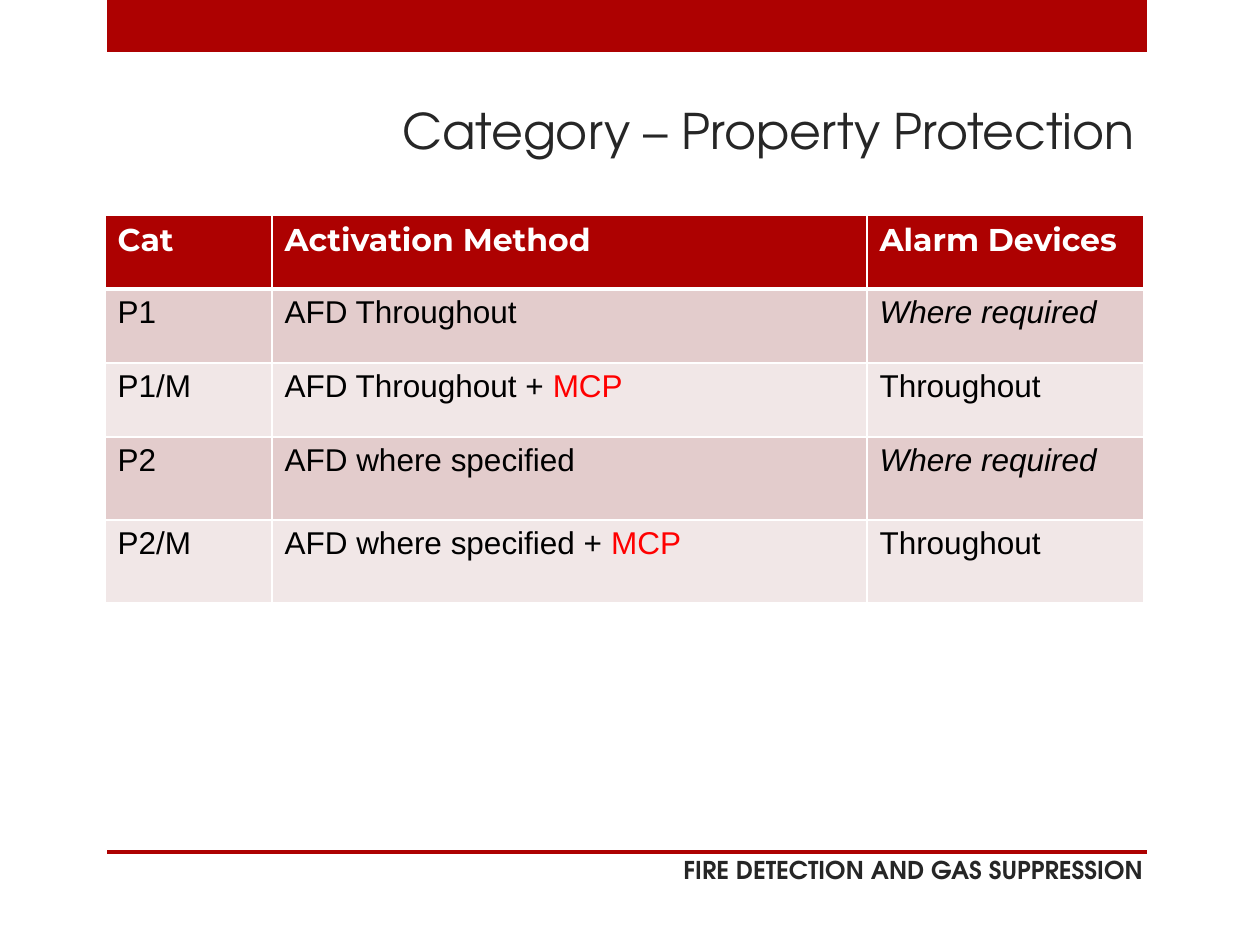
from lxml import etree
from pptx import Presentation
from pptx import util as u
from pptx.dml.color import RGBColor
from pptx.enum import shapes, text
from pptx.oxml.ns import qn

RED = RGBColor(0xAD, 0x01, 0x01)
BRIGHT = RGBColor(0xFF, 0x00, 0x00)
DARK = RGBColor(0x26, 0x26, 0x26)
BLACK = RGBColor(0x00, 0x00, 0x00)
WHITE = RGBColor(0xFF, 0xFF, 0xFF)
BANDS = [RGBColor(0xE3, 0xCC, 0xCC), RGBColor(0xF1, 0xE7, 0xE7)]

HEAD = "TeX Gyre Adventor"
COLS = [167, 595, 277]
ROWS = [74, 74, 74, 83, 83]
MARK = "MCP"
ITALIC = "Where required"
DATA = [
    ["Cat", "Activation Method", "Alarm Devices"],
    ["P1", "AFD Throughout", ITALIC],
    ["P1/M", "AFD Throughout + MCP", "Throughout"],
    ["P2", "AFD where specified", ITALIC],
    ["P2/M", "AFD where specified + MCP", "Throughout"],
]


def px(n):
    return u.Emu(round(n * 914400 / 126))


def style(font, name, size, color, bold=False):
    font.name, font.size, font.bold = name, u.Pt(size), bold
    font.color.rgb = color


def bar(slide, x, y, w, h):
    rect = slide.shapes.add_shape(
        shapes.MSO_SHAPE.RECTANGLE, px(x), px(y), px(w), px(h))
    rect.shadow.inherit = False
    rect.fill.solid()
    rect.fill.fore_color.rgb = RED
    rect.line.fill.background()


def label(shape, words, size, bold=False):
    """Fill a shape with one right-aligned line of heading text."""
    frame = shape.text_frame
    frame.text = words
    frame.word_wrap = True
    frame.auto_size = text.MSO_AUTO_SIZE.NONE
    frame.vertical_anchor = text.MSO_ANCHOR.TOP
    par = frame.paragraphs[0]
    par.alignment = text.PP_ALIGN.RIGHT
    style(par.runs[0].font, HEAD, size, DARK, bold)


def title(slide, x, y, w, h):
    box = slide.shapes.title
    box.left, box.top, box.width, box.height = px(x), px(y), px(w), px(h)
    label(box, "Category – Property Protection", 28)


def footer(slide, x, y, w, h):
    bar(slide, x, y, w, 4)
    box = slide.shapes.add_textbox(px(x - 23), px(y - 1), px(w + 32), px(h))
    label(box, "FIRE DETECTION AND GAS SUPPRESSION", 14, True)


def edge(cell, row):
    """Draw white cell borders, thicker under the header row."""
    thick = {"lnT": 3 if row == 1 else 1, "lnB": 3 if row == 0 else 1}
    props = cell._tc.get_or_add_tcPr()
    for i, tag in enumerate(["lnL", "lnR", "lnT", "lnB"]):
        line = etree.Element(qn("a:" + tag), w=str(u.Pt(thick.get(tag, 1))))
        fill = etree.SubElement(line, qn("a:solidFill"))
        etree.SubElement(fill, qn("a:srgbClr"), val=str(WHITE))
        props.insert(i, line)


def write(cell, words, row):
    par = cell.text_frame.paragraphs[0]
    start, mark, _ = words.partition(MARK)
    for part in filter(None, [start, mark]):
        run = par.add_run()
        run.text = part
        if row == 0:
            style(run.font, "Montserrat", 18, WHITE, True)
        else:
            style(run.font, "Arial", 18, BRIGHT if part == MARK else BLACK)
            run.font.italic = part == ITALIC


def grid(slide, x, y):
    table = slide.shapes.add_table(
        len(ROWS), len(COLS), px(x), px(y), px(sum(COLS)), px(sum(ROWS))).table
    for col, w in zip(table.columns, COLS):
        col.width = px(w)
    for r, (line, h) in enumerate(zip(DATA, ROWS)):
        table.rows[r].height = px(h)
        for c, words in enumerate(line):
            cell = table.cell(r, c)
            cell.fill.solid()
            cell.fill.fore_color.rgb = BANDS[(r - 1) % 2] if r else RED
            edge(cell, r)
            write(cell, words, r)


def main():
    deck = Presentation()
    deck.slide_width, deck.slide_height = px(1260), px(945)
    slide = deck.slides.add_slide(deck.slide_layouts[5])
    bar(slide, 107, 0, 1040, 52)
    footer(slide, 107, 850, 1040, 50)
    title(slide, 105, 94, 1042, 113)
    grid(slide, 105, 215)
    deck.save("out.pptx")


if __name__ == "__main__":
    main()
